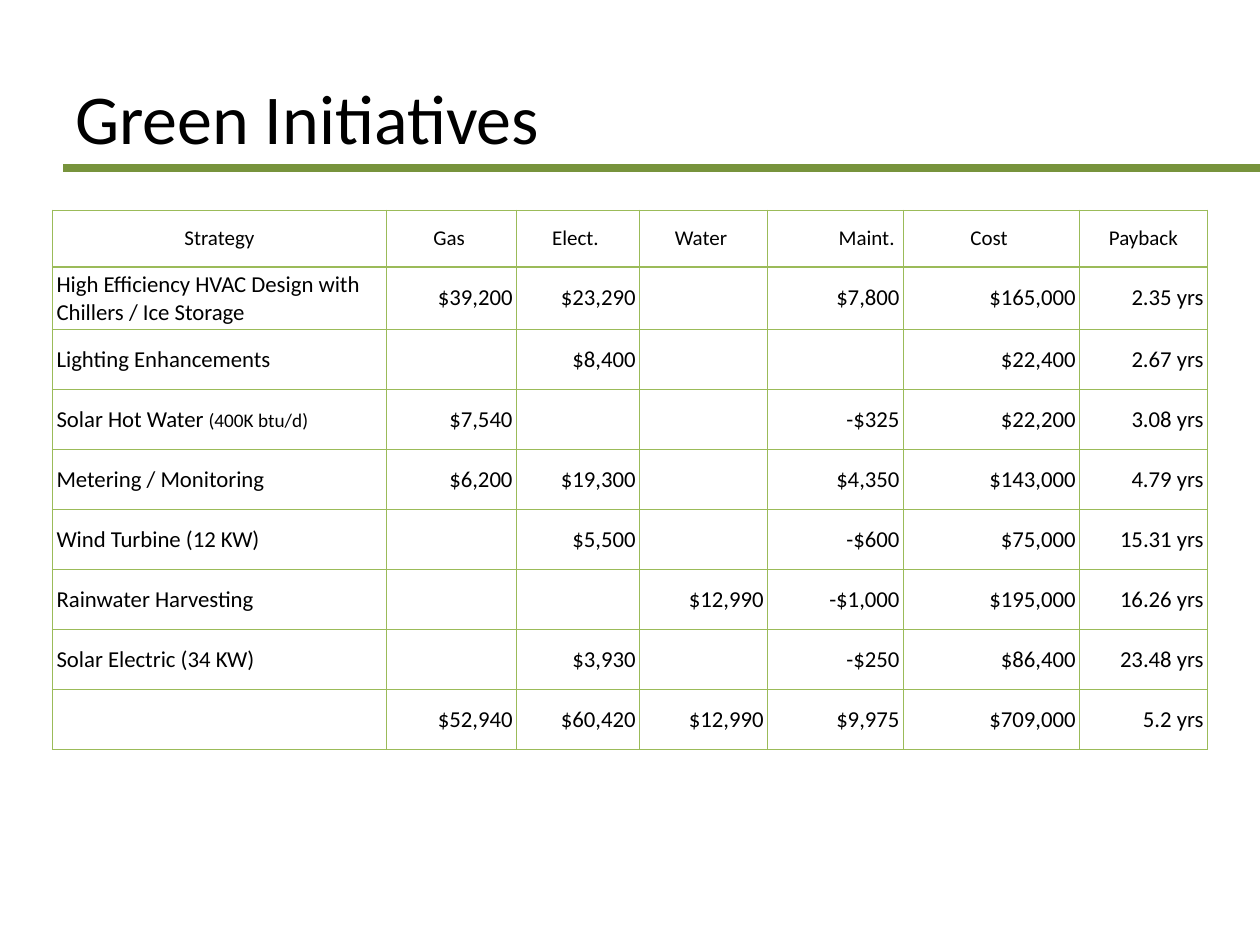
import pptx
import pptx.util
import pptx.dml.color
import pptx.enum.shapes
import pptx.enum.text
import pptx.oxml
import pptx.oxml.ns
from pptx.util import Cm

ALIGN = pptx.enum.text.PP_ALIGN
MIDDLE = pptx.enum.text.MSO_ANCHOR.MIDDLE
BLACK, RULE_GREEN, GRID_GREEN = "000000", "77933C", "9BBB59"

HEADINGS = ["Strategy", "Gas ", "Elect. ", "Water ", "Maint. ", "Cost ", "Payback"]
INITIATIVES = [
    ["High Efficiency HVAC Design with Chillers / Ice Storage",
     "$39,200", "$23,290", "", "$7,800", "$165,000", "2.35 yrs"],
    ["Lighting Enhancements", "", "$8,400", "", "", "$22,400", "2.67 yrs"],
    ["Solar Hot Water ", "$7,540", "", "", "-$325", "$22,200", "3.08 yrs"],
    ["Metering / Monitoring", "$6,200", "$19,300", "", "$4,350", "$143,000", "4.79 yrs"],
    ["Wind Turbine (12 KW)", "", "$5,500", "", "-$600", "$75,000", "15.31 yrs"],
    ["Rainwater Harvesting", "", "", "$12,990", "-$1,000", "$195,000", "16.26 yrs"],
    ["Solar Electric (34 KW)", "", "$3,930", "", "-$250", "$86,400", "23.48 yrs"],
    ["", "$52,940", "$60,420", "$12,990", "$9,975", "$709,000", "5.2 yrs"],
]
STRATEGY_NOTES = {"Solar Hot Water ": "(400K btu/d)"}
COLUMN_WIDTHS = [6.73, 2.62, 2.48, 2.58, 2.74, 3.55, 2.58]
HEADING_HEIGHT, INITIATIVE_HEIGHT = 1.14, 1.21
CELL_FORMAT = {
    "margin_left": Cm(0.08), "margin_right": Cm(0.08),
    "margin_top": Cm(0.08), "margin_bottom": Cm(0.08),
    "vertical_anchor": MIDDLE,
}


def color(hex_value):
    return pptx.dml.color.RGBColor.from_string(hex_value)


def apply_format(target, values):
    for name, value in values.items():
        setattr(target, name, value)


def add_run(paragraph, text, size):
    run = paragraph.add_run()
    run.text = text
    apply_format(run.font, {"name": "Calibri", "size": pptx.util.Pt(size)})
    run.font.color.rgb = color(BLACK)


def draw_heading(slide, left, top, width, height):
    title = slide.shapes.add_textbox(left, top, width, height).text_frame
    apply_format(title, {"word_wrap": True, "vertical_anchor": MIDDLE})
    add_run(title.paragraphs[0], "Green Initiatives", 40)

    rule_y = top + Cm(2.62)
    rule = slide.shapes.add_connector(
        pptx.enum.shapes.MSO_CONNECTOR.STRAIGHT, left, rule_y, Cm(25.4), rule_y)
    rule.line.color.rgb = color(RULE_GREEN)
    rule.line.width = pptx.util.Pt(4.5)
    rule._element.spPr.append(pptx.oxml.parse_xml(
        f"<a:effectLst {pptx.oxml.ns.nsdecls('a')}/>"))


def draw_borders(cell):
    properties = cell._tc.get_or_add_tcPr()
    for side in "LRTB":
        properties.append(pptx.oxml.parse_xml(
            f"<a:ln{side} {pptx.oxml.ns.nsdecls('a')} w='12700'><a:solidFill>"
            f"<a:srgbClr val='{GRID_GREEN}'/></a:solidFill></a:ln{side}>"))


def cell_alignment(row, column):
    if row == 0:
        return ALIGN.RIGHT if HEADINGS[column] == "Maint. " else ALIGN.CENTER
    return ALIGN.LEFT if column == 0 else ALIGN.RIGHT


def draw_savings_table(slide, left, top, width, height):
    rows = [HEADINGS] + INITIATIVES
    savings = slide.shapes.add_table(
        len(rows), len(HEADINGS), left, top, width, height).table
    apply_format(savings, {"first_row": False, "horz_banding": False})
    for column, column_width in zip(savings.columns, COLUMN_WIDTHS):
        column.width = Cm(column_width)
    for row_index, values in enumerate(rows):
        is_heading = row_index == 0
        savings.rows[row_index].height = Cm(
            HEADING_HEIGHT if is_heading else INITIATIVE_HEIGHT)
        for column_index, value in enumerate(values):
            cell = savings.cell(row_index, column_index)
            apply_format(cell, CELL_FORMAT)
            draw_borders(cell)
            cell.fill.background()
            paragraph = cell.text_frame.paragraphs[0]
            paragraph.alignment = cell_alignment(row_index, column_index)
            if value:
                add_run(paragraph, value, 12 if is_heading else 13)
            if value in STRATEGY_NOTES:
                add_run(paragraph, STRATEGY_NOTES[value], 11)


def main():
    presentation = pptx.Presentation()
    apply_format(presentation, {"slide_width": Cm(25.4), "slide_height": Cm(19.05)})
    slide = presentation.slides.add_slide(presentation.slide_layouts[6])
    draw_heading(slide, Cm(1.27), Cm(0.76), Cm(23.29), Cm(3.18))
    draw_savings_table(slide, Cm(1.06), Cm(4.24), Cm(23.28), Cm(10.82))
    presentation.save("out.pptx")


if __name__ == "__main__":
    main()
